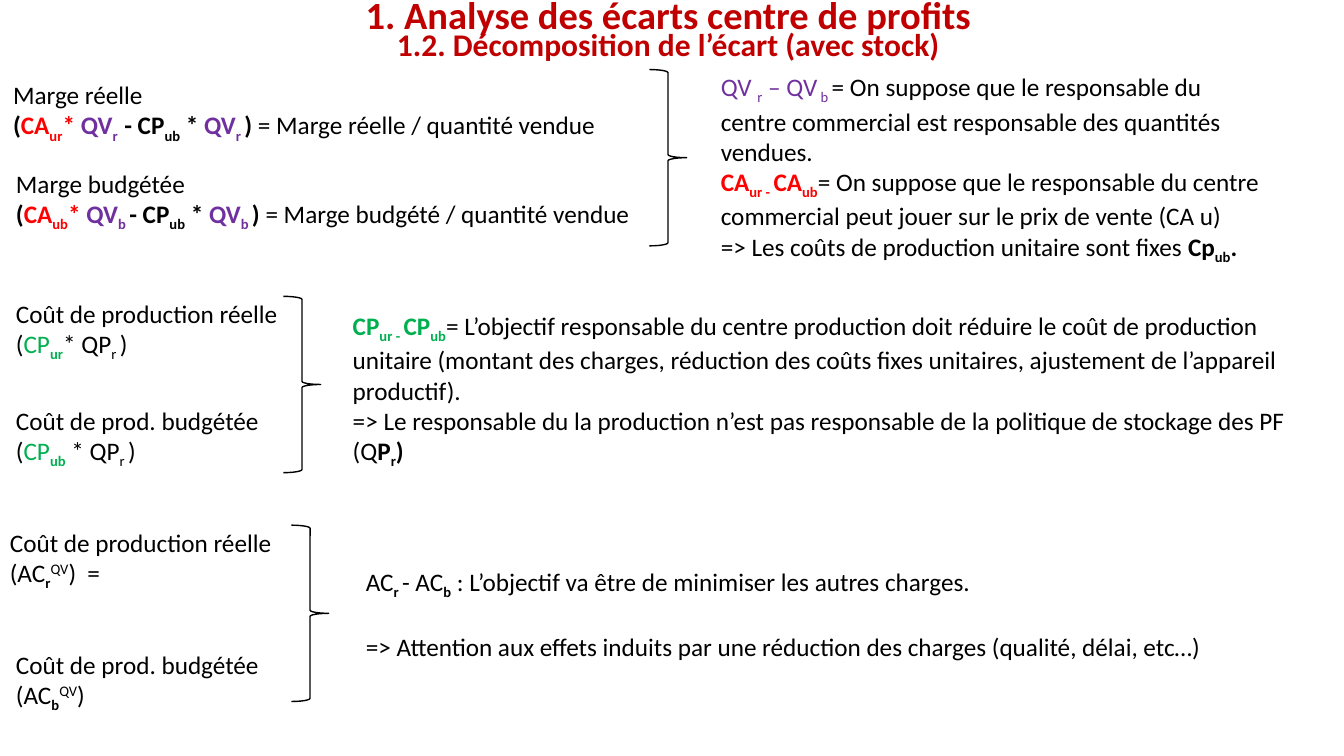
from dataclasses import dataclass

from pptx import Presentation
from pptx.dml.color import RGBColor
from pptx.enum.shapes import MSO_SHAPE
from pptx.enum.text import MSO_ANCHOR, MSO_AUTO_SIZE, PP_ALIGN
from pptx.util import Inches, Pt

WIDE, HIGH = Inches(13.33), Inches(7.5)


@dataclass(frozen=True)
class Theme:
    font: str = "Calibri"
    body: float = 18
    head: float = 27.5
    sub: float = 22.5
    gap: float = 22
    black: str = "000000"
    red: str = "FF0000"
    violet: str = "7030A0"
    green: str = "00B050"
    title: str = "C00000"


LOOK = Theme()
TINTS = {"r": LOOK.red, "v": LOOK.violet, "g": LOOK.green}
SHIFTS = {"_": "-25000", "^": "30000"}


def area(left, top, width, height):
    """Turn percentages of the slide into lengths."""
    return (int(WIDE * left / 100), int(HIGH * top / 100),
            int(WIDE * width / 100), int(HIGH * height / 100))


def style(run, size, tint, bold=False):
    font = run.font
    font.name, font.size, font.bold = LOOK.font, Pt(size), bold
    font.color.rgb = RGBColor.from_string(tint)


def write(para, parts):
    """Parts are (text, marks): b bold, _ low, ^ high, r v g colours."""
    for text, marks in parts:
        run = para.add_run()
        run.text = text
        tint = next((TINTS[m] for m in marks if m in TINTS), LOOK.black)
        style(run, LOOK.body, tint, "b" in marks)
        for mark in marks:
            if mark in SHIFTS:
                run.font._element.set("baseline", SHIFTS[mark])


def note(slide, box, *lines, gap=0):
    frame = slide.shapes.add_textbox(*area(*box)).text_frame
    frame.word_wrap = True
    for row, parts in enumerate(lines):
        para = frame.add_paragraph() if row else frame.paragraphs[0]
        para.space_before = Pt(gap if row else 0)
        write(para, parts)


def brace(slide, left, top):
    shape = slide.shapes.add_shape(MSO_SHAPE.RIGHT_BRACE,
                                   *area(left, top, 2.78, 23.33))
    shape.shadow.inherit = False
    shape.fill.background()
    shape.line.color.rgb = RGBColor.from_string(LOOK.black)
    shape.line.width = Pt(1)


def title(slide):
    shape = slide.shapes.title
    shape.left, shape.top, shape.width, shape.height = area(6.6, -0.4, 86.27, 9.47)
    frame = shape.text_frame
    frame.text = ("1. Analyse des écarts centre de profits\v"
                  "1.2. Décomposition de l’écart (avec stock)")
    frame.auto_size = MSO_AUTO_SIZE.NONE
    frame.word_wrap = True
    frame.vertical_anchor = MSO_ANCHOR.MIDDLE
    para = frame.paragraphs[0]
    para.alignment, para.line_spacing = PP_ALIGN.CENTER, 0.7
    for run, size in zip(para.runs, (LOOK.head, LOOK.sub)):
        style(run, size, LOOK.title, True)


def margin(slide, box, name, sign, pad, result):
    note(slide, box, [(name, "")],
         [("(", "b"), ("CA", "br"), ("u" + sign, "br_"), ("* ", "br"),
          ("QV", "bv"), (sign + pad, "bv_"), ("- CP", "b"), ("ub", "b_"),
          (" * ", "b"), ("QV", "bv"), (sign + " ", "bv_"), (") ", "b"),
          (result, "")])


def cost(slide, top, name, sign, times):
    note(slide, (0.45, top, 27.23, 9.47), [(name, "")],
         [("(", ""), ("CP", "g"), ("u" + sign, "bg_"), (times + " QP", ""),
          ("r ", "_"), (")", "")])


def other(slide, box, name, sign, end):
    note(slide, box, [(name, "")],
         [("(AC", ""), (sign, "b_"), ("QV", "^"), (end, "")])


def change(name, tint):
    """Real less budgeted unit value."""
    return [(name, "b" + tint), ("ur - ", "b_" + tint),
            (name, "b" + tint), ("ub", "b_" + tint)]


def main():
    deck = Presentation()
    deck.slide_width, deck.slide_height = WIDE, HIGH
    slide = deck.slides.add_slide(deck.slide_layouts[5])
    title(slide)
    real, plan = "Coût de production réelle", "Coût de prod. budgétée"

    # Margins
    margin(slide, (0.23, 9.87, 51.46, 9.47), "Marge réelle", "r", "  ",
           "= Marge réelle / quantité vendue")
    margin(slide, (0.45, 21.6, 49.29, 9.47), "Marge budgétée", "b", " ",
           "= Marge budgété / quantité vendue")
    brace(slide, 48.31, 9.2)
    note(slide, (52.89, 8.8, 42.16, 25.6),
         [("QV ", "v"), ("r", "v_"), (" – QV", "v"), (" b ", "v_"),
          ("= On suppose que le responsable du centre commercial est "
           "responsable des quantités vendues.", "")],
         change("CA", "r") +
         [("= On suppose que le responsable du centre commercial peut jouer "
           "sur le prix de vente (CA u)", "")],
         [("=> Les coûts de production unitaire sont fixes ", ""),
          ("Cp", "b"), ("ub", "b_"), (".", "b")])

    # Production costs
    cost(slide, 38.8, real, "r", "*")
    cost(slide, 52.93, plan, "b", " *")
    brace(slide, 21.08, 39.2)
    note(slide, (25.51, 40.4, 74.12, 21.6),
         change("CP", "g") +
         [("= L’objectif responsable du centre production doit réduire le "
           "coût de production unitaire (montant des charges, réduction des "
           "coûts fixes unitaires, ajustement de l’appareil productif).", "")],
         [("=> Le responsable du la production n’est pas responsable de la "
           "politique de stockage des PF (Q", ""),
          ("P", "b"), ("r", "b_"), (")", "b")])

    # Other charges
    other(slide, (0, 69.07, 52.89, 9.47), real, "r", ")  =")
    other(slide, (0.45, 85.2, 60.32, 13.47), plan, "b", ")")
    brace(slide, 21.68, 69.47)
    note(slide, (26.48, 74.27, 69.39, 13.47),
         [("AC", ""), ("r ", "b_"), ("- AC", ""), ("b", "b_"),
          (" : L’objectif va être de minimiser les autres charges.", "")],
         [("=> Attention aux effets induits par une réduction des charges "
           "(qualité, délai, etc…)", "")], gap=LOOK.gap)

    deck.save("out.pptx")


if __name__ == "__main__":
    main()
